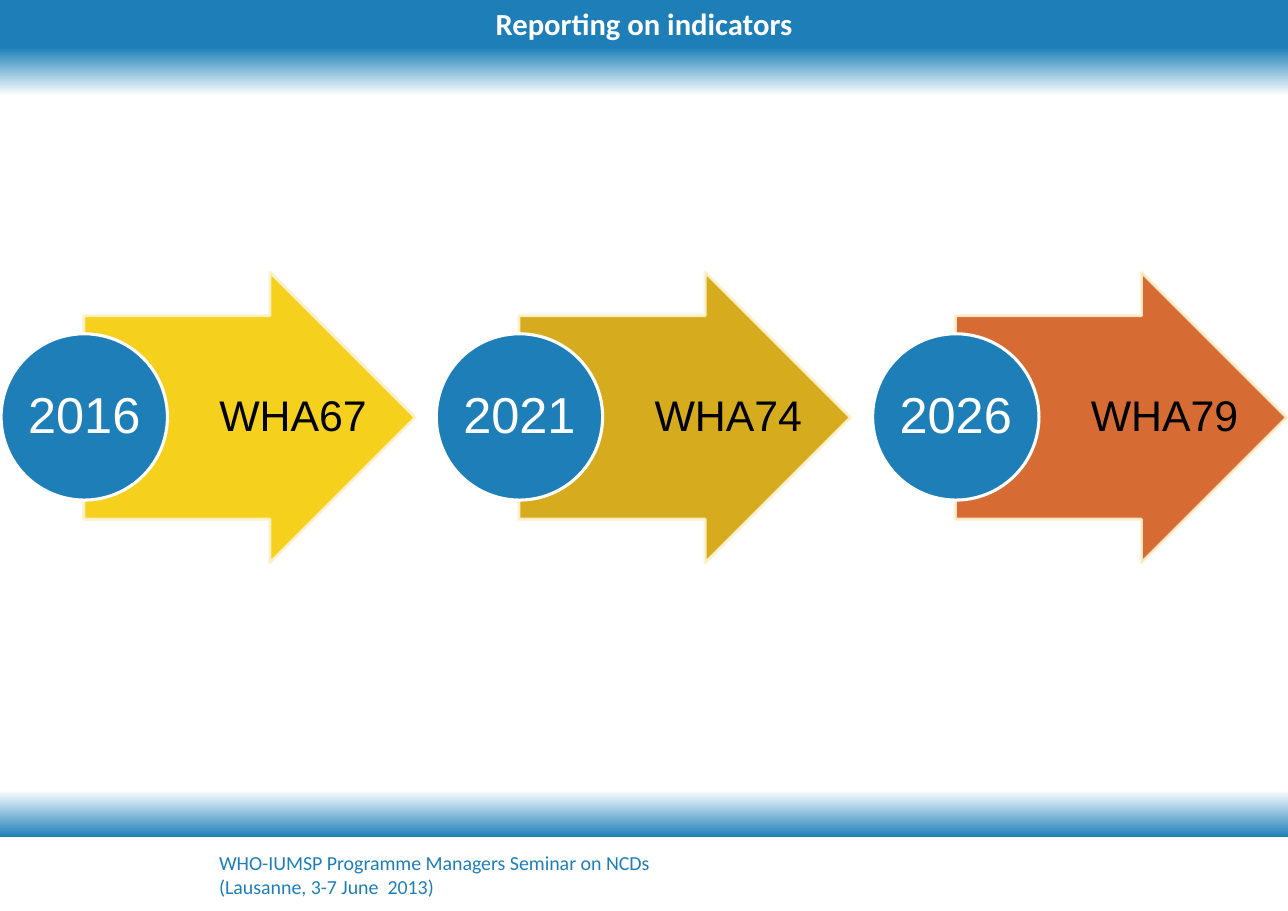
from pptx import Presentation
from pptx.dml.color import RGBColor
from pptx.enum.shapes import MSO_SHAPE
from pptx.enum.text import MSO_ANCHOR, PP_ALIGN
from pptx.oxml import parse_xml
from pptx.oxml.ns import nsdecls
from pptx.util import Pt

PX = 9144  # 100 px to the inch
WIDE, HIGH = 1169, 827
HUES = {"blue": "1E7FB8", "white": "FFFFFF", "black": "000000", "cream": "FDF3D1",
        "yellow": "F5CD06", "gold": "D2A306", "orange": "D35B1F"}
STEPS = [("2016", "WHA67", "yellow"), ("2021", "WHA74", "gold"), ("2026", "WHA79", "orange")]
TITLE = {"name": "Calibri", "size": Pt(20), "bold": True}
FOOT = {"name": "Calibri", "size": Pt(13)}
LABEL = {"name": "Arial", "size": Pt(28)}
YEAR = {"name": "Arial", "size": Pt(33)}


def rgb(hue):
    return RGBColor.from_string(HUES[hue])


def emu(*box):
    return [n * PX for n in box]


def fade(fill):
    """Make a solid fill 90% opaque."""
    fill.solid_color = None


def tint(fill, hue, clear=False):
    fill.solid()
    fill.fore_color.rgb = rgb(hue)
    if clear:
        node = fill._xPr.find(".//{*}srgbClr")
        node.append(parse_xml(f'<a:alpha {nsdecls("a")} val="90000"/>'))


def draw(slide, kind, box, hue=None, edge=None, clear=False):
    shape = slide.shapes.add_shape(kind, *emu(*box))
    shape.shadow.inherit = False
    if hue:
        tint(shape.fill, hue, clear)
    if edge:
        tint(shape.line.fill, edge, clear)
        shape.line.width = Pt(2)
    else:
        shape.line.fill.background()
    return shape


def write(shape, lines, form, hue, pads, align=PP_ALIGN.CENTER,
          anchor=MSO_ANCHOR.MIDDLE, wrap=True, lead=1.0):
    frame = shape.text_frame
    frame.word_wrap = wrap
    frame.vertical_anchor = anchor
    for side, pad in zip(("left", "top", "right", "bottom"), pads):
        setattr(frame, f"margin_{side}", pad * PX)
    frame.text = "\n".join(lines)
    for para in frame.paragraphs:
        para.alignment = align
        para.line_spacing = lead
        for key, value in form.items():
            setattr(para.font, key, value)
        para.font.color.rgb = rgb(hue)


def band(slide, box, turn=0):
    """Blue band that fades to white."""
    shape = draw(slide, MSO_SHAPE.RECTANGLE, box)
    shape.fill.gradient()
    shape.fill.gradient_angle = 270
    for stop, hue, spot in zip(shape.fill.gradient_stops, ("blue", "white"), (0, 1)):
        stop.color.rgb = rgb(hue)
        stop.position = spot
    shape.rotation = turn


def header(slide, box):
    left, top, width, height = box
    band(slide, (left, top + height - 1, width, height))
    bar = draw(slide, MSO_SHAPE.RECTANGLE, box, "blue")
    write(bar, ["Reporting on indicators"], TITLE, "white", (10, 5, 10, 5),
          anchor=MSO_ANCHOR.TOP)


def footer(slide, box):
    left, top, width, height = box
    band(slide, (left, top, width, 43), 180)
    note = slide.shapes.add_textbox(*emu(left + 189, top + 50, 431, 54))
    write(note, ["WHO-IUMSP Programme Managers Seminar on NCDs", "(Lausanne, 3-7 June  2013)"],
          FOOT, "blue", (10, 5, 10, 5), PP_ALIGN.LEFT, MSO_ANCHOR.TOP, False)


def step(slide, box, year, label, hue):
    """Arrow with a label, and a year disc over its tail."""
    left, top, width, height = box
    disc = 151
    half = disc // 2
    arrow = draw(slide, MSO_SHAPE.RIGHT_ARROW, (left + half, top, width - half, height),
                 hue, "cream", True)
    arrow.adjustments[0] = 0.7
    arrow.adjustments[1] = 0.5
    text = slide.shapes.add_textbox(*emu(left + disc - 1, top, width - disc + 1, height))
    write(text, [label], LABEL, "black", (8, 2, 4, 2), lead=0.9)
    dot = draw(slide, MSO_SHAPE.OVAL, (left, top + (height - disc) // 2, disc, disc),
               "blue", "white")
    write(dot, [year], YEAR, "white", (2, 2, 2, 2), wrap=False, lead=0.9)


def chain(slide, box):
    left, top, width, height = box
    size = 376
    count = len(STEPS)
    for i, (year, label, hue) in enumerate(STEPS):
        start = left + (width - size) * i // (count - 1)
        step(slide, (start, top, size, height), year, label, hue)


def main():
    deck = Presentation()
    deck.slide_width, deck.slide_height = emu(WIDE, HIGH)
    slide = deck.slides.add_slide(deck.slide_layouts[6])
    footer(slide, (0, 717, WIDE, HIGH - 717))
    chain(slide, (1, 247, WIDE - 2, 264))
    header(slide, (0, 0, WIDE, 44))
    deck.save("out.pptx")


if __name__ == "__main__":
    main()
